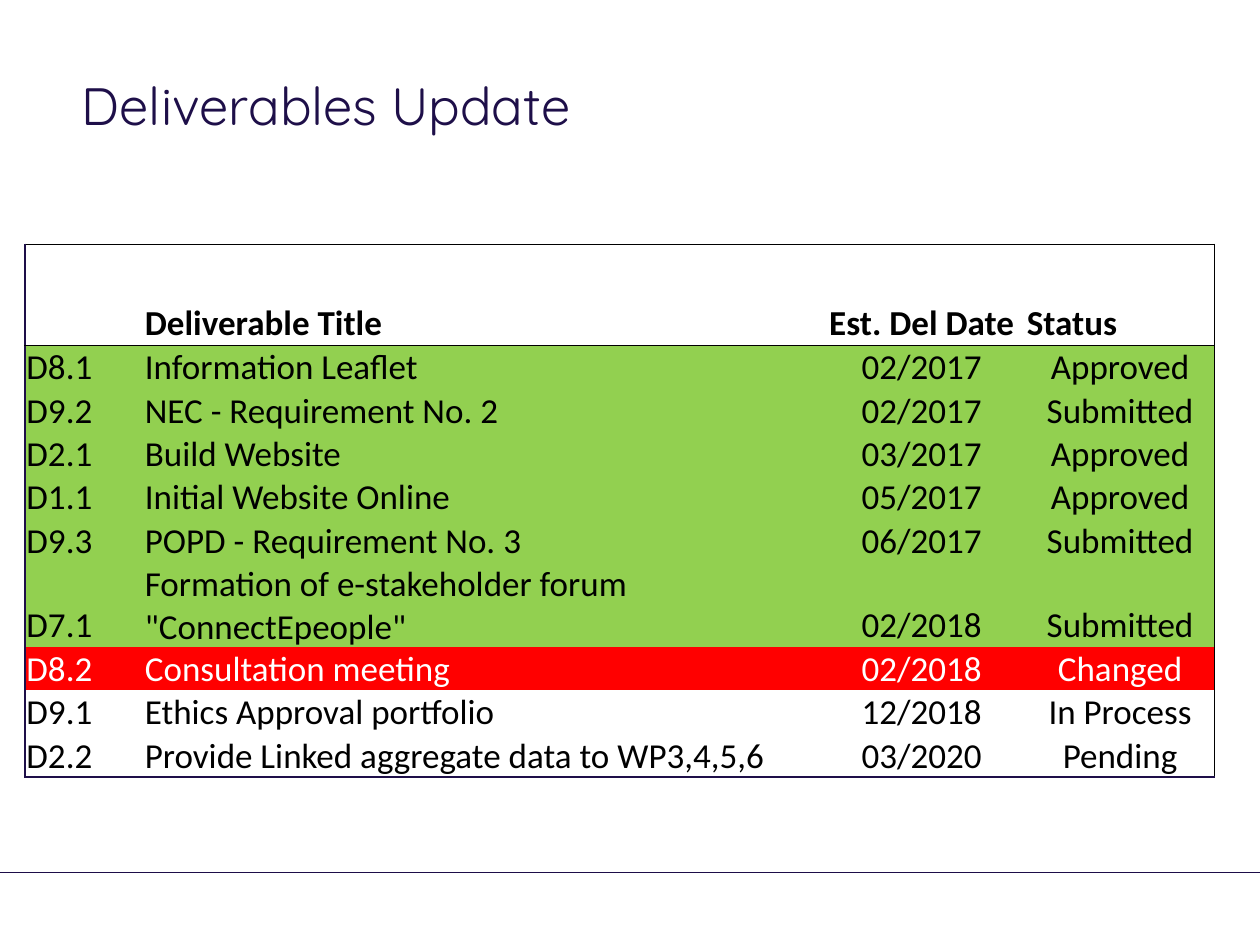
from dataclasses import dataclass

from lxml import etree
from pptx import Presentation
from pptx.dml.color import RGBColor
from pptx.enum import shapes, text
from pptx.oxml import ns
from pptx.util import Inches, Pt


@dataclass(frozen=True)
class Theme:
    navy: str = "1E0F49"
    rule: str = "1D0D49"
    black: str = "000000"
    white: str = "FFFFFF"
    green: str = "92D050"
    red: str = "FF0000"
    title_font: str = "Quicksand"
    table_font: str = "Calibri"
    title_size: int = 30
    table_size: int = 20


theme = Theme()


def style_font(font, **values):
    font.color.rgb = RGBColor.from_string(values.pop("color"))
    for name, value in values.items():
        setattr(font, name, value)


def set_borders(cell, colors):
    """Give each cell edge a 1 pt line, or none where no colour is named."""
    properties = cell._tc.get_or_add_tcPr()
    for index, edge in enumerate("LRTB"):
        line = etree.Element(ns.qn(f"a:ln{edge}"), w=str(Pt(1)))
        if edge in colors:
            fill = etree.SubElement(line, ns.qn("a:solidFill"))
            etree.SubElement(fill, ns.qn("a:srgbClr"), val=colors[edge])
        else:
            etree.SubElement(line, ns.qn("a:noFill"))
        properties.insert(index, line)


deck = Presentation()
deck.slide_width, deck.slide_height = Inches(10), Inches(7.5)
page = deck.slides.add_slide(deck.slide_layouts[6])

# Footer rule
rule = page.shapes.add_connector(
    shapes.MSO_CONNECTOR.STRAIGHT, 0, Inches(6.92), Inches(10), Inches(6.92))
rule.line.color.rgb = RGBColor.from_string(theme.rule)
rule.line.width = Pt(0.25)
etree.SubElement(rule._element.spPr, ns.qn("a:effectLst"))

# Title
box = page.shapes.add_textbox(Inches(0.55), Inches(0.53), Inches(8.26), Inches(1.22))
box.text_frame.word_wrap = True
para = box.text_frame.paragraphs[0]
span = para.add_run()
span.text = "Deliverables Update"
style_font(span.font, name=theme.title_font, size=Pt(theme.title_size), color=theme.navy)

# Deliverables: number, title, date, status, row fill
deliverables = [
    ("", "Deliverable Title", "Est. Del Date", "Status", None),
    ("D8.1", "Information Leaflet", "02/2017", "Approved", theme.green),
    ("D9.2", "NEC - Requirement No. 2", "02/2017", "Submitted", theme.green),
    ("D2.1", "Build Website", "03/2017", "Approved", theme.green),
    ("D1.1", "Initial Website Online", "05/2017", "Approved", theme.green),
    ("D9.3", "POPD - Requirement No. 3", "06/2017", "Submitted", theme.green),
    ("D7.1", 'Formation of e-stakeholder forum "ConnectEpeople"', "02/2018",
     "Submitted", theme.green),
    ("D8.2", "Consultation meeting", "02/2018", "Changed", theme.red),
    ("D9.1", "Ethics Approval portfolio", "12/2018", "In Process", None),
    ("D2.2", "Provide Linked aggregate data to WP3,4,5,6", "03/2020", "Pending", None),
]
column_widths = [0.94, 5.35, 1.65, 1.5]
last_row, last_column = len(deliverables) - 1, len(column_widths) - 1

# Table grid
frame = page.shapes.add_table(
    len(deliverables), len(column_widths),
    Inches(0.2), Inches(1.94), Inches(9.45), Inches(4.2))
table = frame.table
table.first_row = table.horz_banding = False
for column, width in zip(table.columns, column_widths):
    column.width = Inches(width)
for index, row in enumerate(table.rows):
    row.height = Inches(0.26 if index else 0.8)

# Table cells
cell_format = {
    "vertical_anchor": text.MSO_ANCHOR.BOTTOM,
    "margin_left": Inches(0.01),
    "margin_right": Inches(0.01),
    "margin_top": Inches(0.01),
    "margin_bottom": 0,
}
for r, (*values, row_fill) in enumerate(deliverables):
    for c, value in enumerate(values):
        cell = table.cell(r, c)
        for name, setting in cell_format.items():
            setattr(cell, name, setting)
        if row_fill:
            cell.fill.solid()
            cell.fill.fore_color.rgb = RGBColor.from_string(row_fill)
        else:
            cell.fill.background()

        para = cell.text_frame.paragraphs[0]
        centered = c == 2 or (c == 3 and r > 0)
        para.alignment = text.PP_ALIGN.CENTER if centered else text.PP_ALIGN.LEFT
        if value:
            span = para.add_run()
            span.text = value
            style_font(span.font, name=theme.table_font, size=Pt(theme.table_size),
                       bold=r == 0,
                       color=theme.white if row_fill == theme.red else theme.black)

        edges = {}
        if c == 0:
            edges["L"] = theme.navy
        if c == last_column:
            edges["R"] = theme.black
        if r <= 1:
            edges["T"] = theme.black
        if r == 0:
            edges["B"] = theme.black
        if r == last_row:
            edges["B"] = theme.navy
        set_borders(cell, edges)

deck.save("out.pptx")
